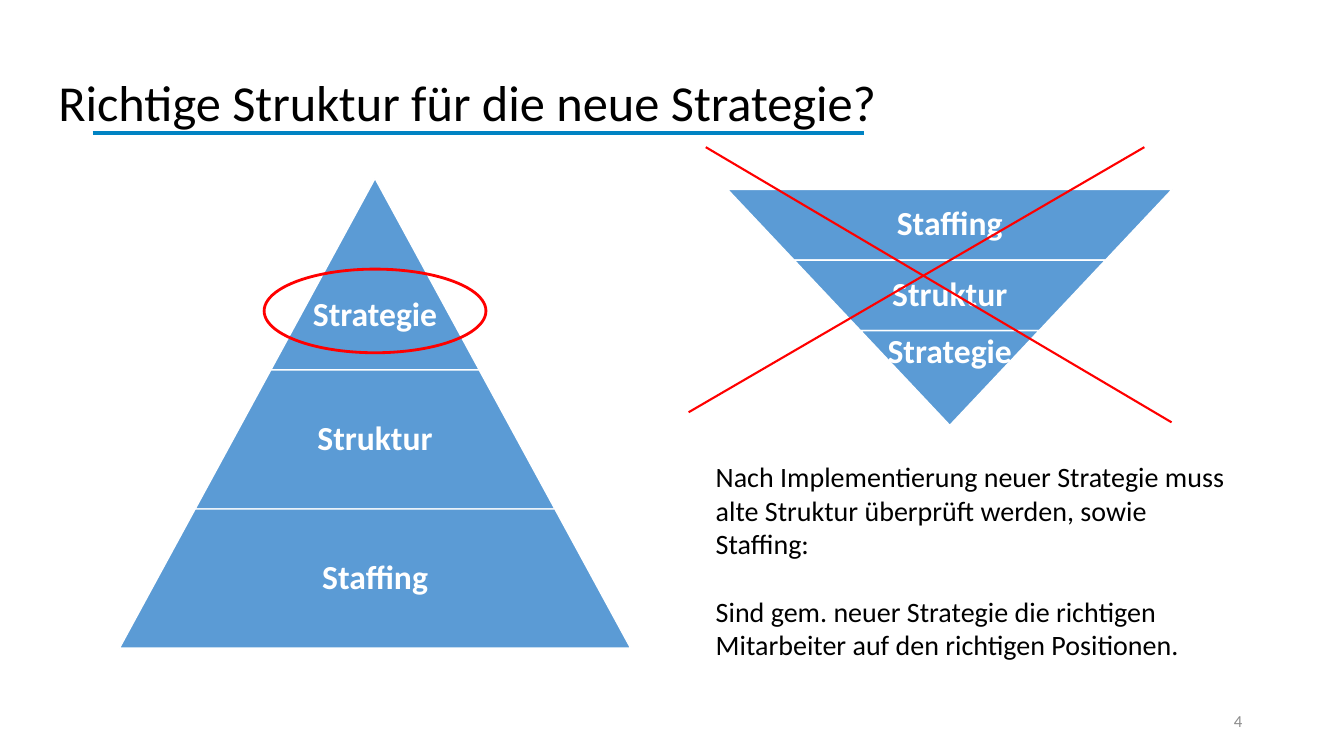
from dataclasses import dataclass

import pptx
import pptx.dml.color
import pptx.enum.shapes
import pptx.enum.text
import pptx.oxml.ns
import pptx.util
from lxml import etree

Inches = pptx.util.Inches
Pt = pptx.util.Pt
Align = pptx.enum.text.PP_ALIGN
Anchor = pptx.enum.text.MSO_ANCHOR
Shape = pptx.enum.shapes.MSO_SHAPE

COLORS = {"black": "000000", "gray": "8C8C8C", "white": "FFFFFF",
          "rule": "0083C3", "band": "5B9BD5", "red": "FF0000"}
BAND_INSET = 0.03


@dataclass
class TextBlock:
    left: float
    top: float
    width: float
    height: float
    paragraphs: list[str]
    size: float
    color: str = "black"
    bold: bool = False
    align: Align = Align.LEFT
    anchor: Anchor = Anchor.TOP
    line_spacing: float = 1.0
    gap: float = 0
    side_inset: float = 0.1
    end_inset: float = 0.05


@dataclass
class Band:
    text: str
    height: float
    label_middle: float  # distance from the top of the band


@dataclass
class Pyramid:
    center: float
    top: float
    slope: float  # horizontal run per unit of height
    inverted: bool
    bands: list[Band]


@dataclass
class Line:
    start: tuple[float, float]
    end: tuple[float, float]
    color: str
    weight: float


def rgb(name: str) -> pptx.dml.color.RGBColor:
    return pptx.dml.color.RGBColor.from_string(COLORS[name])


def set_attributes(target, values: dict) -> None:
    for name, value in values.items():
        setattr(target, name, value)


def draw_text(page, block: TextBlock) -> None:
    box = page.shapes.add_textbox(Inches(block.left), Inches(block.top),
                                  Inches(block.width), Inches(block.height))
    frame = box.text_frame
    set_attributes(frame, {
        "word_wrap": True, "vertical_anchor": block.anchor,
        "margin_left": Inches(block.side_inset), "margin_right": Inches(block.side_inset),
        "margin_top": Inches(block.end_inset), "margin_bottom": Inches(block.end_inset)})
    for index, text in enumerate(block.paragraphs):
        para = frame.add_paragraph() if index else frame.paragraphs[0]
        set_attributes(para, {"alignment": block.align, "line_spacing": block.line_spacing})
        if index:
            para.space_before = Pt(block.gap)
        span = para.add_run()
        span.text = text
        set_attributes(span.font, {"name": "Calibri", "size": Pt(block.size),
                                   "bold": block.bold})
        span.font.color.rgb = rgb(block.color)


def draw_line(page, line: Line) -> None:
    connector = page.shapes.add_connector(
        pptx.enum.shapes.MSO_CONNECTOR.STRAIGHT,
        *(Inches(value) for value in line.start + line.end))
    connector.line.color.rgb = rgb(line.color)
    connector.line.width = Pt(line.weight)
    etree.SubElement(connector._element.spPr, pptx.oxml.ns.qn("a:effectLst"))


def draw_pyramid(page, pyramid: Pyramid) -> None:
    total = sum(band.height for band in pyramid.bands)
    depth = 0.0
    for band in pyramid.bands:
        # The wide edge lies at the bottom, or at the top when inverted
        base = total - depth if pyramid.inverted else depth + band.height
        width = 2 * pyramid.slope * base
        left, top = pyramid.center - width / 2, pyramid.top + depth
        shape = page.shapes.add_shape(Shape.TRAPEZOID, Inches(left), Inches(top),
                                      Inches(width), Inches(band.height))
        shape.adjustments[0] = pyramid.slope
        shape.rotation = 180 if pyramid.inverted else 0
        shape.shadow.inherit = False
        shape.fill.solid()
        shape.fill.fore_color.rgb = rgb("band")
        shape.line.color.rgb = rgb("white")
        shape.line.width = Pt(1)
        draw_text(page, TextBlock(
            left, top + band.label_middle - 0.25, width, 0.5, [band.text], 24, "white",
            bold=True, align=Align.CENTER, anchor=Anchor.MIDDLE, line_spacing=0.9,
            side_inset=BAND_INSET, end_inset=BAND_INSET))
        depth += band.height


def draw_highlight(page) -> None:
    ring = page.shapes.add_shape(Shape.OVAL, Inches(2.62), Inches(2.67),
                                 Inches(2.2), Inches(0.83))
    ring.shadow.inherit = False
    ring.fill.background()
    ring.line.color.rgb = rgb("red")
    ring.line.width = Pt(2)


TITLE_RULE = Line((0.92, 1.32), (8.57, 1.32), "rule", 2.25)
CROSS = [Line((7, 1.46), (11.62, 4.19), "red", 1.5),
         Line((11.35, 1.46), (6.83, 4.09), "red", 1.5)]

TITLE = TextBlock(0.48, 0.4, 10.31, 0.96, ["Richtige Struktur für die neue Strategie?"],
                  36, anchor=Anchor.BOTTOM, line_spacing=0.9)
PAGE_NUMBER = TextBlock(9.42, 6.95, 3, 0.4, ["4"], 12, "gray",
                        align=Align.RIGHT, anchor=Anchor.MIDDLE)
EXPLANATION = TextBlock(7, 4.51, 5.42, 2.12, [
    "Nach Implementierung neuer Strategie muss alte Struktur überprüft werden, sowie Staffing:",
    "Sind gem. neuer Strategie die richtigen Mitarbeiter auf den richtigen Positionen.",
], 20, gap=24)

PYRAMIDS = [
    Pyramid(3.72, 1.77, 0.544, False, [Band("Strategie", 1.9, 1.36),
                                       Band("Struktur", 1.38, 0.69),
                                       Band("Staffing", 1.38, 0.69)]),
    Pyramid(9.42, 1.88, 0.942, True, [Band("Staffing", 0.7, 0.35),
                                      Band("Struktur", 0.7, 0.35),
                                      Band("Strategie", 0.94, 0.22)]),
]


def main() -> None:
    deck = pptx.Presentation()
    set_attributes(deck, {"slide_width": Inches(13.33), "slide_height": Inches(7.5)})
    page = deck.slides.add_slide(deck.slide_layouts[6])

    # Title and page number
    draw_line(page, TITLE_RULE)
    draw_text(page, TITLE)
    draw_text(page, PAGE_NUMBER)

    # Right and wrong order of the layers
    for pyramid in PYRAMIDS:
        draw_pyramid(page, pyramid)
    for stroke in CROSS:
        draw_line(page, stroke)
    draw_highlight(page)

    # Explanation
    draw_text(page, EXPLANATION)
    deck.save("out.pptx")


if __name__ == "__main__":
    main()
